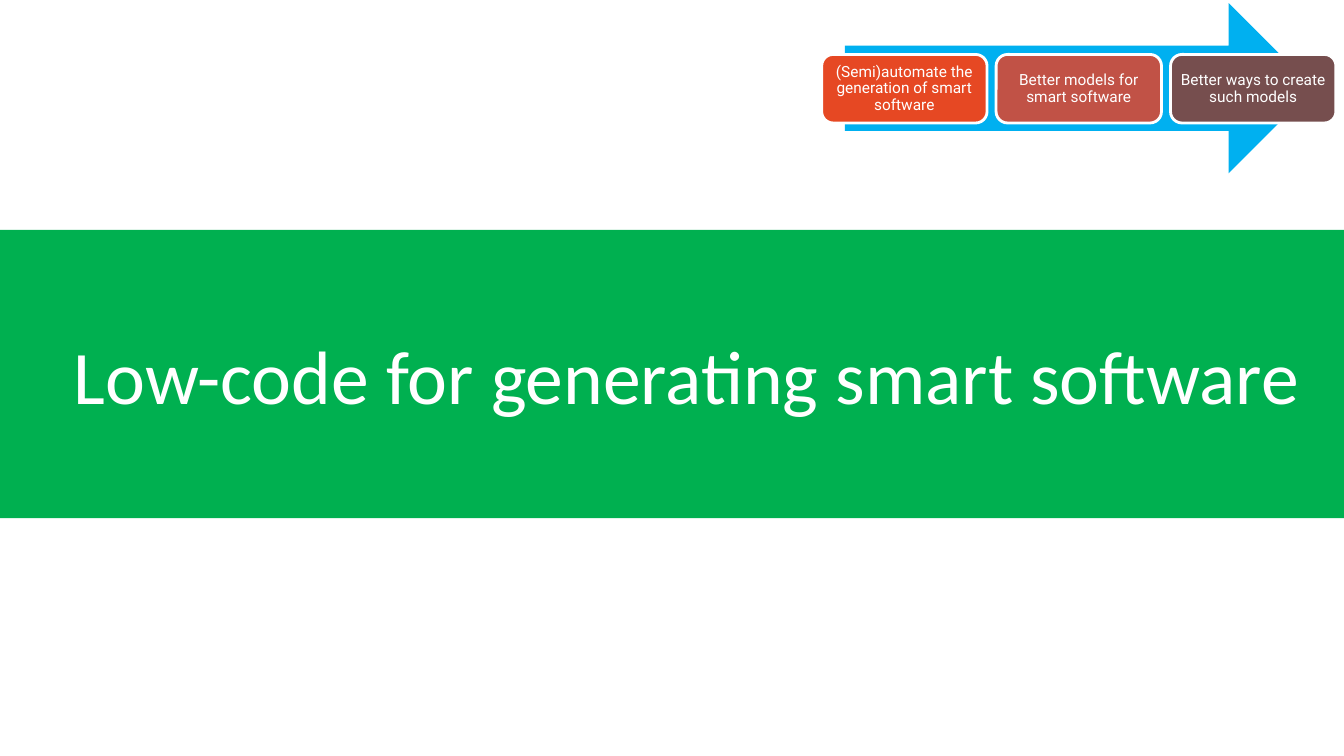
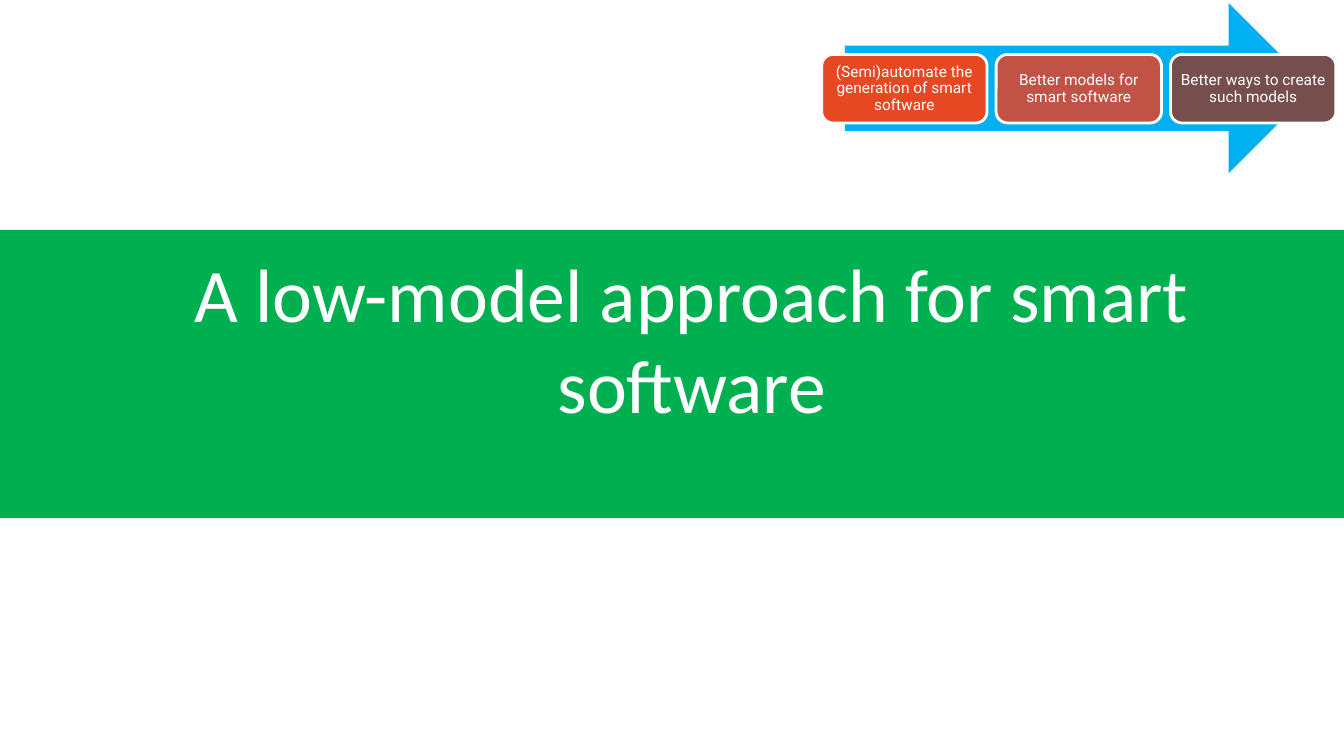
from dataclasses import dataclass

from pptx import Presentation
from pptx.dml.color import RGBColor
from pptx.enum.shapes import MSO_SHAPE
from pptx.enum.text import MSO_ANCHOR, PP_ALIGN
from pptx.util import Emu, Pt


@dataclass(frozen=True)
class Theme:
    white: str = "FFFFFF"
    band: str = "00B050"
    arrow: str = "00B0F0"
    steps: tuple = ("E64823", "C15246", "764E4E")
    title_font: str = "Calibri"
    step_font: str = "Roboto"
    title_size: int = 54
    step_size: int = 11
    outline: int = 2


theme = Theme()
PX = 9144


def add_block(shapes, kind, box, fill, line=None):
    sp = shapes.add_shape(kind, *(Emu(v * PX) for v in box))
    sp.shadow.inherit = False
    sp.fill.solid()
    sp.fill.fore_color.rgb = RGBColor.from_string(fill)
    if line:
        sp.line.color.rgb = RGBColor.from_string(line)
        sp.line.width = Pt(theme.outline)
    else:
        sp.line.fill.background()
    return sp


def write(sp, text, font, size, anchor, inset, spacing):
    tf = sp.text_frame
    frame = {"word_wrap": True, "vertical_anchor": anchor}
    frame.update({f"margin_{side}": Emu(inset * PX)
                  for side in ("left", "top", "right", "bottom")})
    p = tf.paragraphs[0]
    r = p.add_run()
    r.text = text
    formats = (
        (tf, frame),
        (p, {"alignment": PP_ALIGN.CENTER, "line_spacing": spacing}),
        (r.font, {"name": font, "size": Pt(size)}),
    )
    for target, values in formats:
        for name, value in values.items():
            setattr(target, name, value)
    r.font.color.rgb = RGBColor.from_string(theme.white)


WIDTH, HEIGHT = 1333, 750
STEP_LEFT, STEP_TOP, STEP_WIDTH, STEP_HEIGHT, STEP_GAP = 815, 54, 164, 68, 9
STEPS = (
    "(Semi)automate the generation of smart software",
    "Better models for smart software",
    "Better ways to create such models",
)
SLIDES = (
    ("Low-code for generating smart software", (45, 257, 1272, 169)),
    ("A low-model approach for smart software", (50, 266, 1272, 169)),
)

prs = Presentation()
prs.slide_width = Emu(WIDTH * PX)
prs.slide_height = Emu(HEIGHT * PX)

for title, box in SLIDES:
    s = prs.slides.add_slide(prs.slide_layouts[6])
    add_block(s.shapes, MSO_SHAPE.RECTANGLE, (0, 228, WIDTH, 286), theme.band)
    tb = s.shapes.add_textbox(*(Emu(v * PX) for v in box))
    write(tb, title, theme.title_font, theme.title_size, MSO_ANCHOR.BOTTOM, 10, 1.0)

    grp = s.shapes.add_group_shape()
    add_block(grp.shapes, MSO_SHAPE.RIGHT_ARROW, (838, 3, 465, 169), theme.arrow)
    for i, (text, color) in enumerate(zip(STEPS, theme.steps)):
        left = STEP_LEFT + i * (STEP_WIDTH + STEP_GAP)
        sp = add_block(grp.shapes, MSO_SHAPE.ROUNDED_RECTANGLE,
                       (left, STEP_TOP, STEP_WIDTH, STEP_HEIGHT), color, theme.white)
        write(sp, text, theme.step_font, theme.step_size, MSO_ANCHOR.MIDDLE, 5, 0.9)

prs.save("out.pptx")
